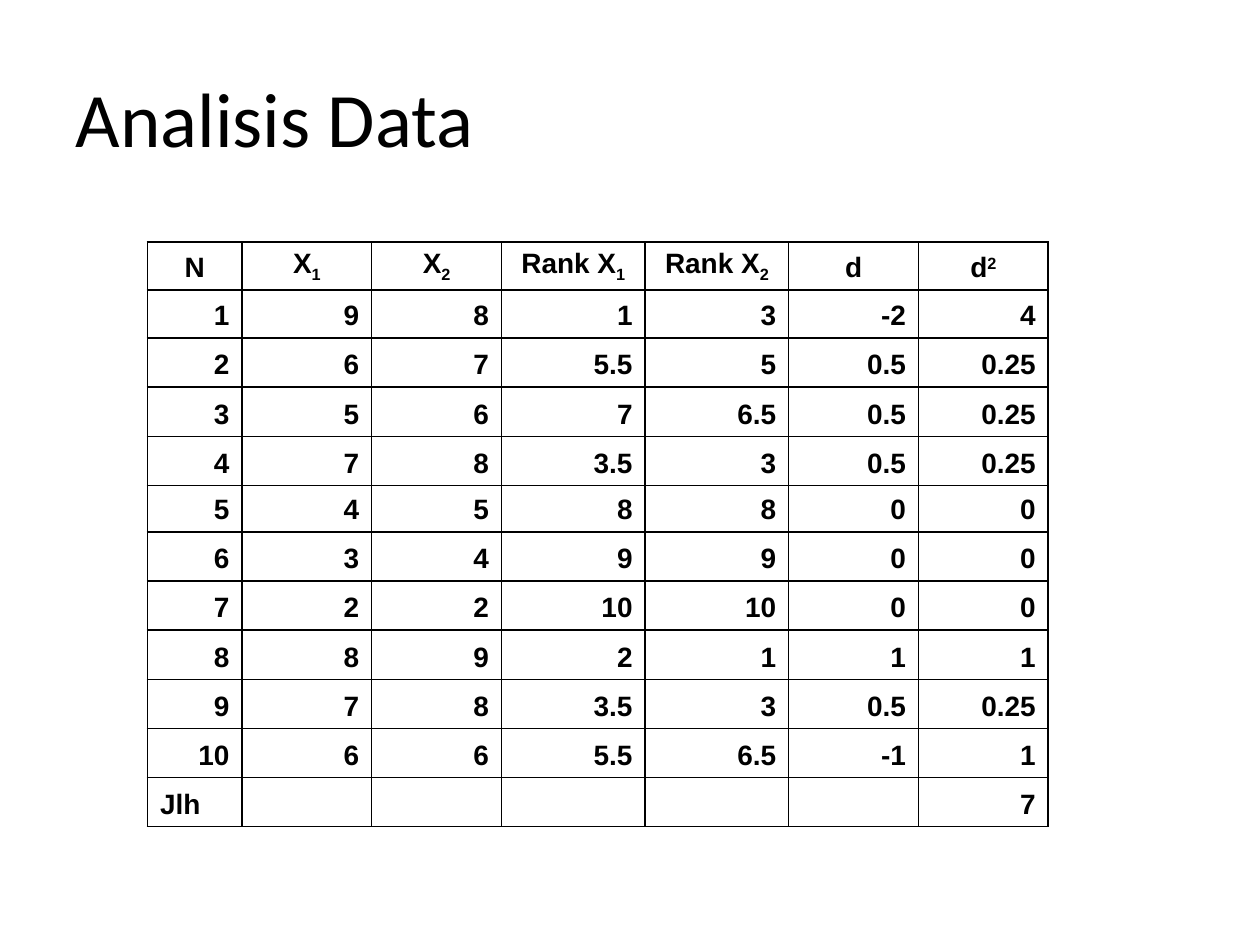
import dataclasses

import lxml.etree
import pptx
import pptx.dml.color
import pptx.enum.text
import pptx.oxml.ns
import pptx.util


@dataclasses.dataclass(frozen=True)
class Theme:
    ink: str = "000000"
    title_font: str = "Calibri"
    title_size: int = 44
    table_font: str = "Arial"
    table_size: int = 16
    border_width: int = 1


theme = Theme()
qn = pptx.oxml.ns.qn
Inches = pptx.util.Inches
Alignment = pptx.enum.text.PP_ALIGN
Anchor = pptx.enum.text.MSO_ANCHOR


def set_font(paragraph, name, size, bold):
    paragraph.font.name = name
    paragraph.font.size = pptx.util.Pt(size)
    paragraph.font.bold = bold
    paragraph.font.color.rgb = pptx.dml.color.RGBColor.from_string(theme.ink)


def add_borders(cell):
    properties = cell._tc.get_or_add_tcPr()
    for side in ("lnL", "lnR", "lnT", "lnB"):
        line = lxml.etree.SubElement(
            properties, qn(f"a:{side}"), w=str(pptx.util.Pt(theme.border_width)))
        fill = lxml.etree.SubElement(line, qn("a:solidFill"))
        lxml.etree.SubElement(fill, qn("a:srgbClr"), val=theme.ink)


presentation = pptx.Presentation()
presentation.slide_width = Inches(10)
presentation.slide_height = Inches(7.5)
slide = presentation.slides.add_slide(presentation.slide_layouts[5])
width, height = presentation.slide_width, presentation.slide_height

title = slide.shapes.title
title.left, title.top = int(width * 0.05), int(height * 0.04)
title.width, title.height = int(width * 0.9), Inches(1.25)
title.text_frame.text = "Analisis Data"
title.text_frame.vertical_anchor = Anchor.MIDDLE
title.text_frame.paragraphs[0].alignment = Alignment.LEFT
set_font(title.text_frame.paragraphs[0], theme.title_font, theme.title_size, False)

SUBSCRIPT, SUPERSCRIPT = "-25000", "30000"
headers = [
    ("N", "", None),
    ("X", "1", SUBSCRIPT),
    ("X", "2", SUBSCRIPT),
    ("Rank X", "1", SUBSCRIPT),
    ("Rank X", "2", SUBSCRIPT),
    ("d", "", None),
    ("d", "2", SUPERSCRIPT),
]
records = [
    ("1", "9", "8", "1", "3", "-2", "4"),
    ("2", "6", "7", "5.5", "5", "0.5", "0.25"),
    ("3", "5", "6", "7", "6.5", "0.5", "0.25"),
    ("4", "7", "8", "3.5", "3", "0.5", "0.25"),
    ("5", "4", "5", "8", "8", "0", "0"),
    ("6", "3", "4", "9", "9", "0", "0"),
    ("7", "2", "2", "10", "10", "0", "0"),
    ("8", "8", "9", "2", "1", "1", "1"),
    ("9", "7", "8", "3.5", "3", "0.5", "0.25"),
    ("10", "6", "6", "5.5", "6.5", "-1", "1"),
    ("Jlh", "", "", "", "", "", "7"),
]
rows = [headers] + [[(value, "", None) for value in record] for record in records]
column_widths = [0.75, 1.03, 1.03, 1.14, 1.14, 1.03, 1.03]
row_heights = {0: 0.38, 1: 0.38, 5: 0.37}
hanging_indent = Inches(0.38)

table = slide.shapes.add_table(
    len(rows), len(headers), Inches(1.17), Inches(1.92), Inches(7.15), Inches(4.65)).table
table.first_row = table.horz_banding = False
for column, column_width in zip(table.columns, column_widths):
    column.width = Inches(column_width)

for row_index, row in enumerate(rows):
    table.rows[row_index].height = Inches(row_heights.get(row_index, 0.39))
    for column_index, (text, script, baseline) in enumerate(row):
        cell = table.cell(row_index, column_index)
        add_borders(cell)
        cell.fill.background()
        cell.vertical_anchor = Anchor.BOTTOM
        paragraph = cell.text_frame.paragraphs[0]
        if row_index == 0:
            paragraph.alignment = Alignment.CENTER
        elif text == "Jlh":
            paragraph.alignment = Alignment.LEFT
        else:
            paragraph.alignment = Alignment.RIGHT
        set_font(paragraph, theme.table_font, theme.table_size, True)
        indents = paragraph._p.get_or_add_pPr()
        indents.set("marL", str(hanging_indent))
        indents.set("indent", str(-hanging_indent))
        if text:
            paragraph.add_run().text = text
        else:
            lxml.etree.SubElement(
                paragraph._p, qn("a:endParaRPr"), sz=str(theme.table_size * 100))
        if script:
            run = paragraph.add_run()
            run.text = script
            run.font._element.set("baseline", baseline)

presentation.save("out.pptx")
